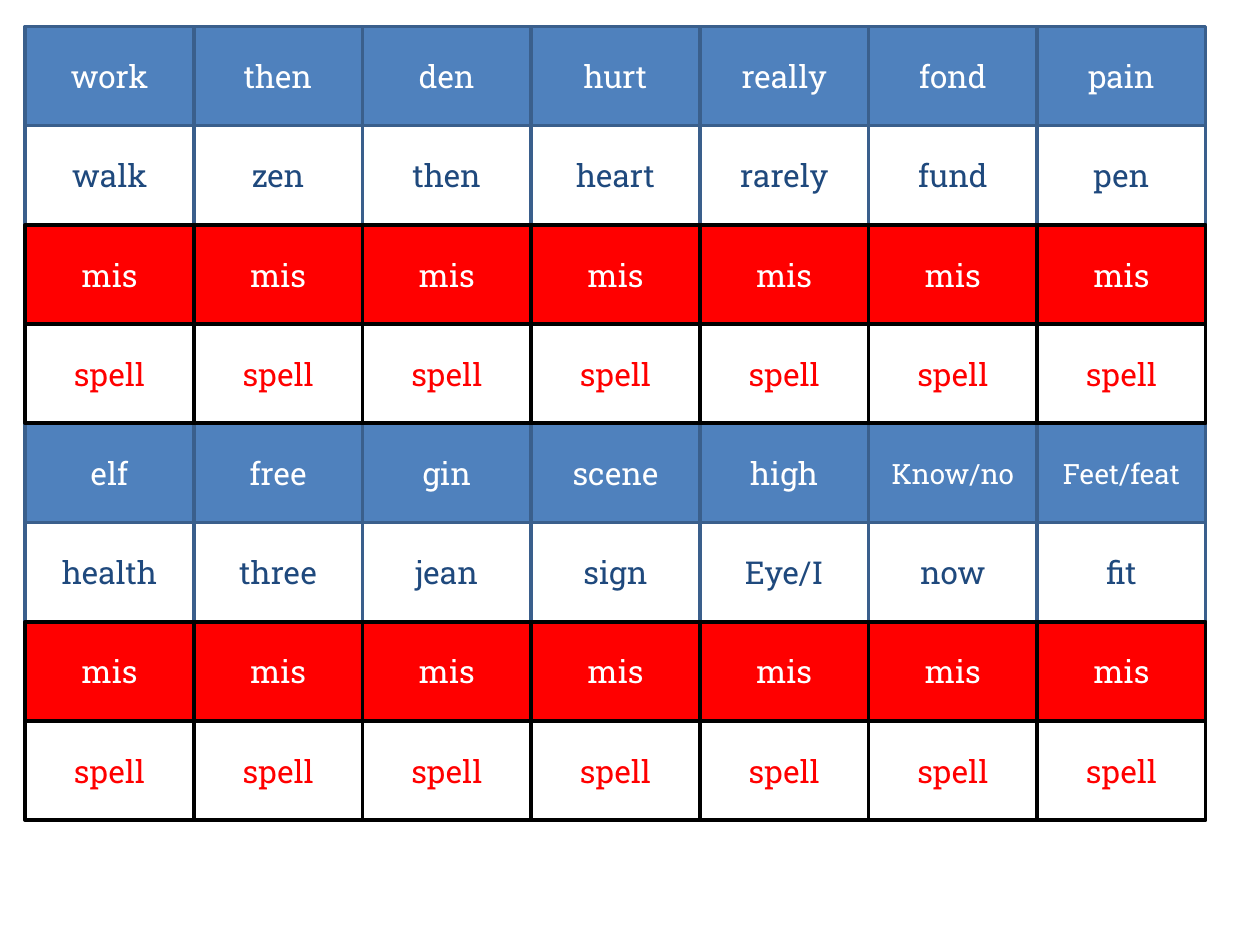
from pptx import Presentation
from pptx.dml.color import RGBColor
from pptx.enum import shapes, text
from pptx.util import Inches, Pt

HEX = {"blue": "4F81BD", "edge": "3A5F8C", "navy": "1F497D",
       "red": "FF0000", "black": "000000", "white": "FFFFFF"}
FONT = "Roboto Slab"

# Kind of card: fill, line, text
LOOKS = {
    "top": ("blue", "edge", "white"),
    "pair": ("white", "edge", "navy"),
    "mis": ("red", "black", "white"),
    "spell": ("white", "black", "red"),
}
COLS = 7
# Grid row, kind of card, words; the black-edged cards lie on top
ROWS = [
    (0, "top", ["work", "then", "den", "hurt", "really", "fond", "pain"]),
    (1, "pair", ["walk", "zen", "then", "heart", "rarely", "fund", "pen"]),
    (4, "top", ["elf", "free", "gin", "scene", "high", "Know/no", "Feet/feat"]),
    (5, "pair", ["health", "three", "jean", "sign", "Eye/I", "now", "fit"]),
    (2, "mis", ["mis"] * COLS),
    (3, "spell", ["spell"] * COLS),
    (6, "mis", ["mis"] * COLS),
    (7, "spell", ["spell"] * COLS),
]
LEFT, TOP = 0.2, 0.21
WIDE, HIGH = 9.37 / COLS, 6.3 / len(ROWS)


def color(name):
    return RGBColor.from_string(HEX[name])


def add_card(slide, col, row, word, look):
    fill, edge, ink = LOOKS[look]
    card = slide.shapes.add_shape(
        shapes.MSO_SHAPE.RECTANGLE,
        Inches(LEFT + col * WIDE), Inches(TOP + row * HIGH),
        Inches(WIDE), Inches(HIGH))
    card.shadow.inherit = False
    card.fill.solid()
    card.fill.fore_color.rgb = color(fill)
    card.line.color.rgb = color(edge)
    card.line.width = Pt(2)

    frame = card.text_frame
    frame.text = word
    frame.word_wrap = True
    frame.vertical_anchor = text.MSO_ANCHOR.MIDDLE
    para = frame.paragraphs[0]
    para.alignment = text.PP_ALIGN.CENTER
    font = para.runs[0].font
    font.name = FONT
    font.size = Pt(16 if len(word) > 6 else 18)
    font.color.rgb = color(ink)


def main():
    deck = Presentation()
    deck.slide_width, deck.slide_height = Inches(10), Inches(7.5)
    slide = deck.slides.add_slide(deck.slide_layouts[6])
    for row, look, words in ROWS:
        for col, word in enumerate(words):
            add_card(slide, col, row, word, look)
    deck.save("out.pptx")


if __name__ == "__main__":
    main()
